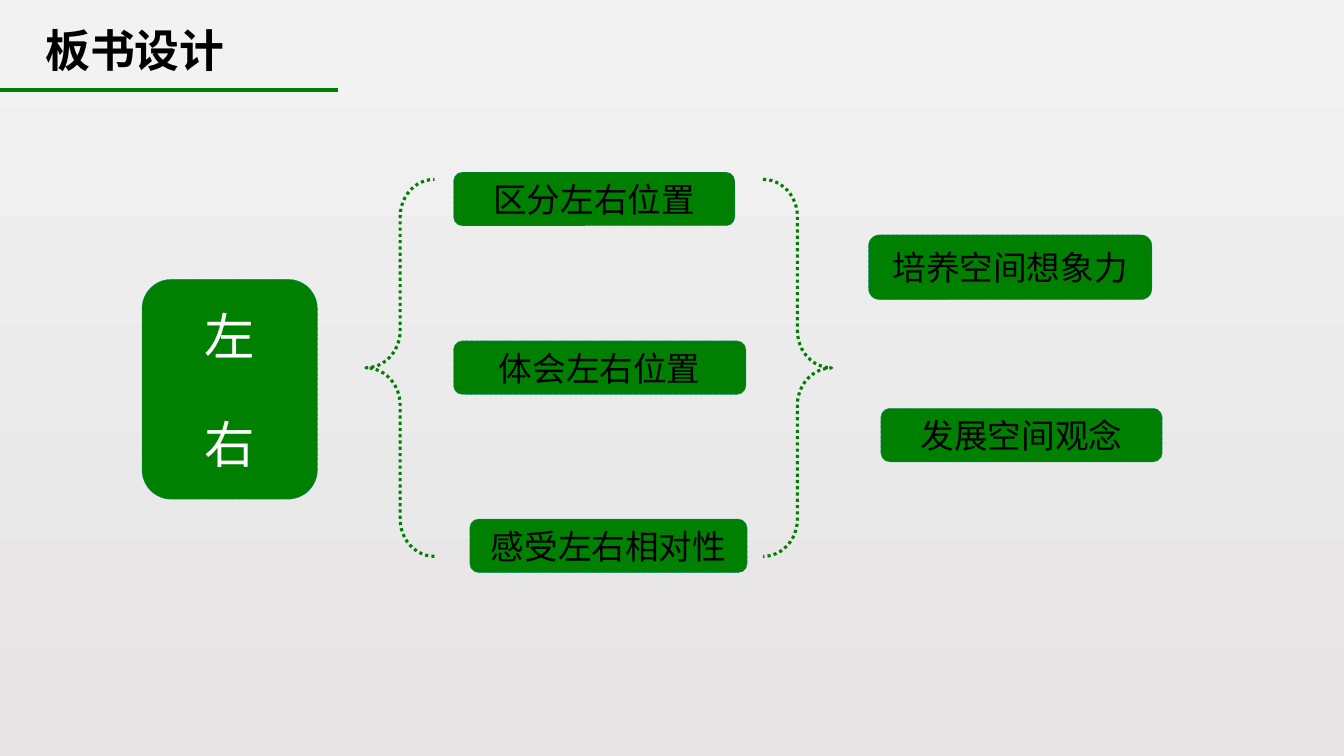
from pptx import Presentation
from pptx import util as u
from pptx.dml.color import RGBColor
from pptx.enum import dml, shapes, text
from pptx.oxml.ns import qn
from lxml import etree

GREEN = RGBColor(0x00, 0x80, 0x00)
TEAL = RGBColor(0x00, 0x80, 0x80)
BLACK = RGBColor(0x00, 0x00, 0x00)
WHITE = RGBColor(0xFF, 0xFF, 0xFF)
PALE = RGBColor(0xF2, 0xF2, 0xF2)
GREY = RGBColor(0xE6, 0xE4, 0xE4)
HAN = "Noto Sans CJK SC"
KIND = shapes.MSO_SHAPE


def write(frame, words, size=24, color=BLACK, font="Arial", bold=False,
          align=text.PP_ALIGN.CENTER, gap=0, wrap=False):
    frame.word_wrap = wrap
    frame.vertical_anchor = text.MSO_ANCHOR.MIDDLE
    for i, word in enumerate(words):
        para = frame.add_paragraph() if i else frame.paragraphs[0]
        para.alignment = align
        para.space_before = u.Pt(gap if i else 0)
        run = para.add_run()
        run.text = word
        run.font.size = u.Pt(size)
        run.font.bold = bold
        run.font.name = font
        run.font.color.rgb = color
        etree.SubElement(run.font._element, qn("a:ea"), typeface=HAN)


def stroke(line, color, width, dots=True):
    line.color.rgb = color
    line.width = u.Pt(width)
    if dots:
        line.dash_style = dml.MSO_LINE.ROUND_DOT


def draw(slide, kind, box, ratio):
    shape = slide.shapes.add_shape(kind, *[u.Cm(n) for n in box])
    shape.shadow.inherit = False
    shape.adjustments[0] = ratio
    return shape


def card(slide, box, words, **form):
    shape = draw(slide, KIND.ROUNDED_RECTANGLE, box, 0.167)
    shape.fill.solid()
    shape.fill.fore_color.rgb = GREEN
    stroke(shape.line, TEAL, 0.25)
    write(shape.text_frame, words, **form)


def brace(slide, box, turn=0):
    shape = draw(slide, KIND.LEFT_BRACE, box, 0.543)
    shape.fill.background()
    shape.rotation = turn
    stroke(shape.line, GREEN, 2.25)


def cards(slide, box, items):
    left, top = box
    for word, dx, dy, width, height in items:
        card(slide, (left + dx, top + dy, width, height), [word])


def header(slide, box, words):
    left, top, width, height = box
    title = slide.shapes.title
    title.left, title.top = u.Cm(left + 0.89), u.Cm(top + 0.43)
    title.width, title.height = u.Cm(5.84), u.Cm(1.63)
    write(title.text_frame, [words], size=32, font=HAN, bold=True,
          align=text.PP_ALIGN.LEFT, wrap=True)
    base = u.Cm(top + height)
    rule = slide.shapes.add_connector(
        shapes.MSO_CONNECTOR.STRAIGHT, u.Cm(left), base, u.Cm(left + width), base)
    stroke(rule.line, GREEN, 2.75, dots=False)
    etree.SubElement(rule._element.spPr, qn("a:effectLst"))


def chart(slide, box):
    left, top = box
    card(slide, (left, top + 2.7, 4.42, 5.54), ["左", "右"],
         size=36, color=WHITE, gap=34)
    brace(slide, (left + 5.64, top + 0.18, 1.73, 9.5))
    cards(slide, (left + 7.85, top), [
        ("区分左右位置", 0, 0, 7.09, 1.35),
        ("体会左右位置", 0, 4.25, 7.37, 1.35),
        ("感受左右相对性", 0.41, 8.74, 6.99, 1.35),
    ])
    brace(slide, (left + 15.65, top + 0.18, 1.73, 9.5), turn=180)
    cards(slide, (left + 18.31, top + 1.58), [
        ("培养空间想象力", 0, 0, 7.14, 1.63),
        ("发展空间观念", 0.31, 4.37, 7.09, 1.35),
    ])


def paint(slide):
    fill = slide.background.fill
    fill.gradient()
    fill.gradient_angle = 270
    for stop, color, place in zip(fill.gradient_stops, (PALE, GREY), (0, 1)):
        stop.color.rgb = color
        stop.position = place


def main():
    deck = Presentation()
    deck.slide_width, deck.slide_height = u.Cm(33.87), u.Cm(19.05)
    slide = deck.slides.add_slide(deck.slide_layouts[5])
    paint(slide)
    header(slide, (0, 0, 8.53, 2.26), "板书设计")
    chart(slide, (3.58, 4.34))
    deck.save("out.pptx")


if __name__ == "__main__":
    main()
